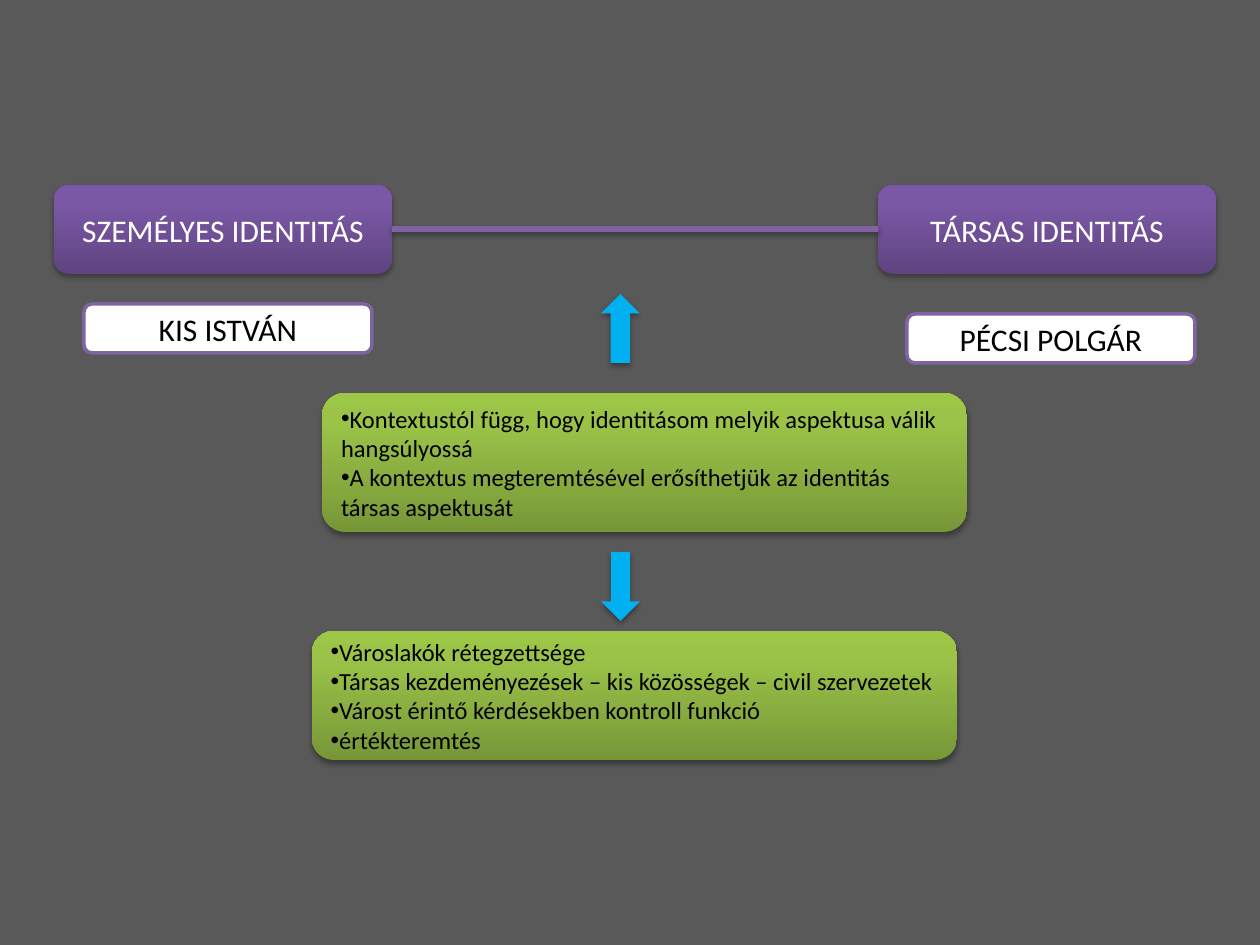
"""Build a slide contrasting personal and social identity."""
import copy
import dataclasses
import typing

import lxml.etree
import pptx
import pptx.dml.color
import pptx.enum.shapes
import pptx.enum.text
import pptx.oxml.ns
import pptx.util

PX = 914400 // 126
COLORS = {
    "background": "595959",
    "white": "FFFFFF",
    "black": "000000",
    "purple": "8064A2",
    "arrow": "00B0F0",
    "purple dark": "5F4480",
    "purple mid": "7B58A6",
    "purple light": "7C57A8",
    "green dark": "779737",
    "green mid": "9BC348",
    "green light": "9DC746",
}
GRADIENT_STOPS = {"dark": 0, "mid": 0.8, "light": 1}
FRAME_FORMAT = {"word_wrap": True, "vertical_anchor": pptx.enum.text.MSO_ANCHOR.MIDDLE}
SHADOW_FORMAT = {"blurRad": "40000", "dist": "23000", "dir": "5400000", "rotWithShape": "0"}


@dataclasses.dataclass(frozen=True)
class Box:
    left: int
    top: int
    width: int
    height: int
    fill: str
    lines: tuple[str, ...]
    text_color: str = "black"
    size: int = 18
    gradient: bool = True
    bulleted: bool = False


@dataclasses.dataclass(frozen=True)
class Arrow:
    top: int
    rotation: int


BOXES = (
    *(
        Box(left, 185, 338, 89, "purple", (title,), text_color="white")
        for left, title in ((54, "SZEMÉLYES IDENTITÁS"), (878, "TÁRSAS IDENTITÁS"))
    ),
    *(
        Box(left, top, 288, 49, "white", (example,), gradient=False)
        for left, top, example in ((84, 304, "KIS ISTVÁN"), (907, 314, "PÉCSI POLGÁR"))
    ),
    Box(322, 393, 645, 139, "green", (
        "Kontextustól függ, hogy identitásom melyik aspektusa válik hangsúlyossá",
        "A kontextus megteremtésével erősíthetjük az identitás társas aspektusát",
    ), size=14, bulleted=True),
    Box(312, 631, 645, 129, "green", (
        "Városlakók rétegzettsége",
        "Társas kezdeményezések – kis közösségek – civil szervezetek",
        "Várost érintő kérdésekben kontroll funkció",
        "értékteremtés",
    ), size=14, bulleted=True),
)
ARROWS = (Arrow(309, 270), Arrow(567, 90))


def rgb(name: str) -> pptx.dml.color.RGBColor:
    """Look up a named colour."""
    return pptx.dml.color.RGBColor.from_string(COLORS[name])


def set_values(target: typing.Any, values: dict[str, typing.Any]) -> None:
    """Set every format value on the target."""
    for name, value in values.items():
        setattr(target, name, value)


def add_element(parent: typing.Any, tag: str, **attributes: str) -> typing.Any:
    """Append a drawing element to its parent."""
    return lxml.etree.SubElement(parent, pptx.oxml.ns.qn(tag), attributes)


def add_shadow(effects: typing.Any) -> None:
    """Put the soft downward shadow in an effect list."""
    shadow = add_element(effects, "a:outerShdw", **SHADOW_FORMAT)
    color = add_element(shadow, "a:srgbClr", val=COLORS["black"])
    add_element(color, "a:alpha", val="35000")


def add_shape(slide: typing.Any, kind: typing.Any, left: int, top: int,
              width: int, height: int, shadowed: bool) -> typing.Any:
    """Add a preset shape placed in px."""
    shape = slide.shapes.add_shape(kind, *(length * PX for length in (left, top, width, height)))
    shape.shadow.inherit = False
    if shadowed:
        add_shadow(shape._element.spPr.find(pptx.oxml.ns.qn("a:effectLst")))
    return shape


def fill_gradient(shape: typing.Any, family: str) -> None:
    """Fill a shape from dark at the bottom to light at the top."""
    shape.fill.gradient()
    shape.fill.gradient_angle = 90
    stop_list = shape._element.spPr.find(".//" + pptx.oxml.ns.qn("a:gsLst"))
    stop_list.append(copy.deepcopy(stop_list[-1]))
    for stop, (shade, position) in zip(shape.fill.gradient_stops, GRADIENT_STOPS.items()):
        stop.position = position
        stop.color.rgb = rgb(f"{family} {shade}")


def write_lines(shape: typing.Any, box: Box) -> None:
    """Write the paragraphs of a box."""
    frame = shape.text_frame
    set_values(frame, FRAME_FORMAT)
    alignment = pptx.enum.text.PP_ALIGN
    for index, line in enumerate(box.lines):
        paragraph = frame.add_paragraph() if index else frame.paragraphs[0]
        paragraph.alignment = alignment.LEFT if box.bulleted else alignment.CENTER
        if box.bulleted:
            properties = paragraph._p.get_or_add_pPr()
            add_element(properties, "a:buFont", typeface="Arial")
            add_element(properties, "a:buChar", char="•")
        run = paragraph.add_run()
        run.text = line
        set_values(run.font, {"name": "Calibri", "size": pptx.util.Pt(box.size)})
        run.font.color.rgb = rgb(box.text_color)


def draw_box(slide: typing.Any, box: Box) -> None:
    """Draw a rounded box with its text."""
    kind = pptx.enum.shapes.MSO_SHAPE.ROUNDED_RECTANGLE
    shape = add_shape(slide, kind, box.left, box.top, box.width, box.height, box.gradient)
    if box.gradient:
        fill_gradient(shape, box.fill)
        shape.line.fill.background()
    else:
        shape.fill.solid()
        shape.fill.fore_color.rgb = rgb(box.fill)
        shape.line.color.rgb = rgb("purple")
        shape.line.width = pptx.util.Pt(2)
    write_lines(shape, box)


def draw_arrow(slide: typing.Any, arrow: Arrow) -> None:
    """Draw a block arrow turned up or down."""
    kind = pptx.enum.shapes.MSO_SHAPE.RIGHT_ARROW
    shape = add_shape(slide, kind, 586, arrow.top, 69, 39, True)
    shape.rotation = arrow.rotation
    shape.fill.solid()
    shape.fill.fore_color.rgb = rgb("arrow")
    shape.line.fill.background()


def draw_link(slide: typing.Any, start: Box, end: Box) -> None:
    """Join two boxes on the same row with a line."""
    middle = start.top + start.height // 2
    ends = (start.left + start.width, middle, end.left, middle)
    connector = slide.shapes.add_connector(
        pptx.enum.shapes.MSO_CONNECTOR.STRAIGHT, *(length * PX for length in ends))
    connector.line.color.rgb = rgb("purple")
    connector.line.width = pptx.util.Pt(3)
    add_shadow(add_element(connector._element.spPr, "a:effectLst"))


def main() -> None:
    """Build and save the presentation."""
    presentation = pptx.Presentation()
    set_values(presentation, {"slide_width": 1260 * PX, "slide_height": 945 * PX})
    slide = presentation.slides.add_slide(presentation.slide_layouts[6])
    slide.background.fill.solid()
    slide.background.fill.fore_color.rgb = rgb("background")
    for box in BOXES:
        draw_box(slide, box)
    draw_link(slide, *BOXES[:2])
    for arrow in ARROWS:
        draw_arrow(slide, arrow)
    presentation.save("out.pptx")


if __name__ == "__main__":
    main()
